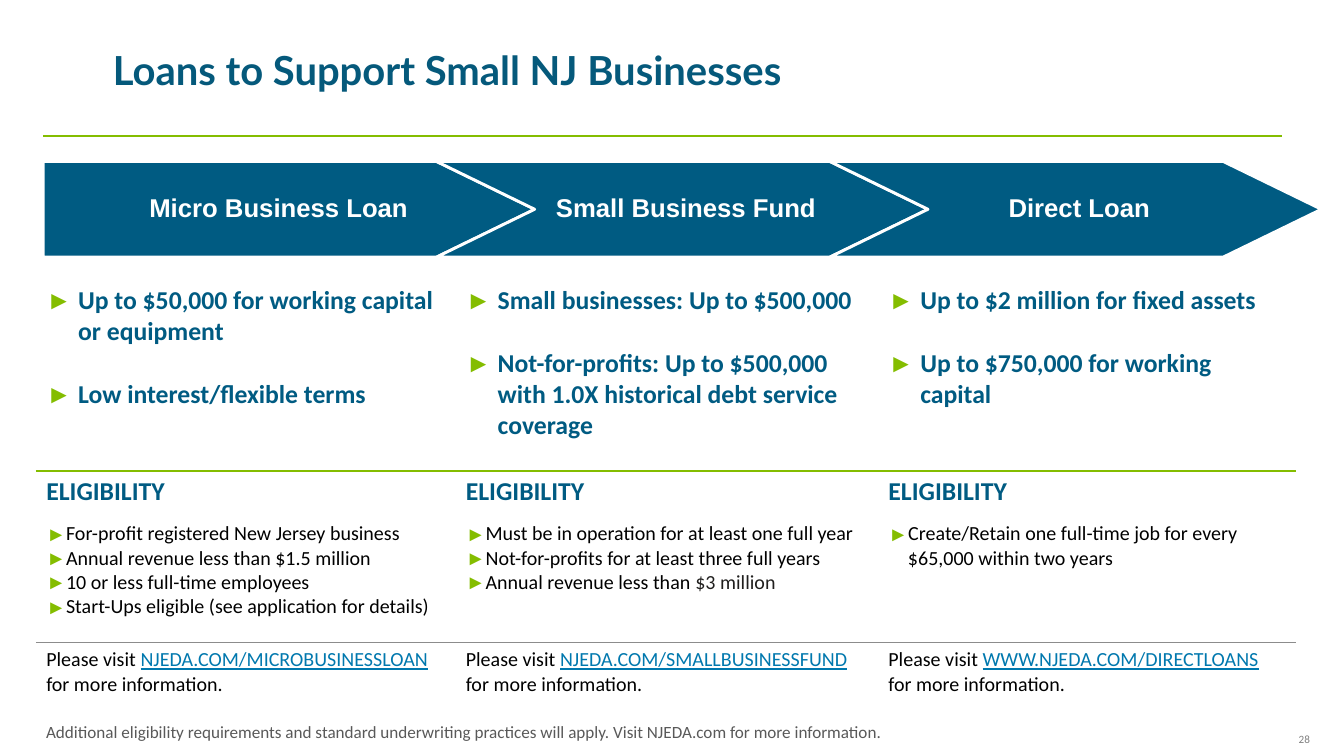
from dataclasses import dataclass
from typing import Any

from lxml import etree
from pptx import Presentation
from pptx.dml.color import RGBColor
from pptx.enum.text import MSO_ANCHOR, PP_ALIGN
from pptx.oxml.ns import qn
from pptx.util import Inches, Pt

CENTER, RIGHT = PP_ALIGN.CENTER, PP_ALIGN.RIGHT
MIDDLE = MSO_ANCHOR.MIDDLE
NO_TABLE_STYLE = "{2D5ABB26-0587-4C30-8999-92F81FD0307C}"


@dataclass(frozen=True)
class Theme:
    title_blue: str = "05597B"
    blue: str = "005B82"
    link: str = "0078AE"
    green: str = "84BD00"
    white: str = "FFFFFF"
    black: str = "000000"
    near_black: str = "201F1E"
    note_grey: str = "595959"
    number_grey: str = "808080"
    rule_grey: str = "8C8C8C"
    title_font: str = "Lato"
    arrow_font: str = "Arial"
    body_font: str = "Calibri"
    title_size: float = 28
    head_size: float = 18
    body_size: float = 14
    note_size: float = 12
    number_size: float = 7.8


T = Theme()


@dataclass(frozen=True)
class Style:
    size: float
    color: str
    font: str = T.body_font
    bold: bool = False
    underline: bool = False


@dataclass(frozen=True)
class Loan:
    name: str
    terms: list[str]
    eligibility: list[str]
    site: str
    amount: str = ""  # ends the last eligibility item in its own colour


@dataclass(frozen=True)
class Border:
    color: str
    width: float


TITLE = Style(T.title_size, T.title_blue, T.title_font, bold=True)
ARROW = Style(T.head_size, T.white, T.arrow_font, bold=True)
HEAD = Style(T.head_size, T.blue, bold=True)
BODY = Style(T.body_size, T.black)
AMOUNT = Style(T.body_size, T.near_black)
LINK = Style(T.body_size, T.link, underline=True)
NOTE = Style(T.note_size, T.note_grey)
NUMBER = Style(T.number_size, T.number_grey)

LOANS = [
    Loan("Micro Business Loan",
         ["Up to $50,000 for working capital or equipment", "Low interest/flexible terms"],
         ["For-profit registered New Jersey business", "Annual revenue less than $1.5 million",
          "10 or less full-time employees", "Start-Ups eligible (see application for details)"],
         "NJEDA.COM/MICROBUSINESSLOAN"),
    Loan("Small Business Fund",
         ["Small businesses: Up to $500,000",
          "Not-for-profits: Up to $500,000 with 1.0X historical debt service coverage"],
         ["Must be in operation for at least one full year",
          "Not-for-profits for at least three full years", "Annual revenue less than "],
         "NJEDA.COM/SMALLBUSINESSFUND", "$3 million"),
    Loan("Direct Loan",
         ["Up to $2 million for fixed assets", "Up to $750,000 for working capital"],
         ["Create/Retain one full-time job for every $65,000 within two years"],
         "WWW.NJEDA.COM/DIRECTLOANS"),
]
COLUMN_WIDTHS = [4.08, 4.11, 4.06]
ROW_HEIGHTS = [1.86, 1.67, 0.99]
RULES = [Border(T.green, 1.5), Border(T.rule_grey, 0.75)]  # below rows 1 and 2


def assign(target: Any, values: dict[str, Any]) -> None:
    for name, value in values.items():
        setattr(target, name, value)


def add_run(p: Any, text: str, style: Style) -> None:
    r = p.add_run()
    r.text = text
    assign(r.font, {"name": style.font, "size": Pt(style.size),
                    "bold": style.bold, "underline": style.underline})
    r.font.color.rgb = RGBColor.from_string(style.color)


def set_insets(tf: Any, insets: tuple[float, ...]) -> None:
    """Set the left, top, right and bottom insets."""
    sides = ("margin_left", "margin_top", "margin_right", "margin_bottom")
    assign(tf, dict(zip(sides, map(Inches, insets))))


def add_text(s: Any, box: tuple[float, ...], text: str, style: Style) -> Any:
    tf = s.shapes.add_textbox(*map(Inches, box)).text_frame
    tf.word_wrap = True
    add_run(tf.paragraphs[0], text, style)
    return tf


def add_arrow(s: Any, index: int, name: str) -> None:
    left, top, step, point, height = 0.42, 1.57, 3.825, 0.955, 0.93
    x, mid, bottom = left + index * step, top + height / 2, top + height
    outline = [(x + step, top), (x + step + point, mid), (x + step, bottom), (x, bottom)]
    if index:
        outline.append((x + point, mid))
    builder = s.shapes.build_freeform(Inches(x), Inches(top))
    builder.add_line_segments([(Inches(a), Inches(b)) for a, b in outline], close=True)
    sp = builder.convert_to_shape()
    sp.shadow.inherit = False
    sp.fill.solid()
    sp.fill.fore_color.rgb = RGBColor.from_string(T.blue)
    sp.line.color.rgb = RGBColor.from_string(T.white)
    sp.line.width = Pt(2)
    tf = sp.text_frame
    assign(tf, {"word_wrap": True, "vertical_anchor": MIDDLE})
    set_insets(tf, (0.69, 0.07, 0.62, 0.07) if index else (0.13, 0.07, 0.33, 0.07))
    p = tf.paragraphs[0]
    assign(p, {"alignment": CENTER, "line_spacing": 0.9})
    add_run(p, name, ARROW)


def add_bullet(p: Any, text: str, style: Style, indent: float) -> None:
    pPr = p._p.get_or_add_pPr()
    pPr.set("marL", str(Inches(indent)))
    pPr.set("indent", str(-Inches(indent)))
    color = etree.SubElement(pPr, qn("a:buClr"))
    etree.SubElement(color, qn("a:srgbClr"), val=T.green)
    etree.SubElement(pPr, qn("a:buFont"), typeface=T.arrow_font)
    etree.SubElement(pPr, qn("a:buChar"), char="►")
    add_run(p, text, style)


def set_border(cell: Any, tag: str, border: Border) -> None:
    ln = etree.SubElement(cell._tc.get_or_add_tcPr(), qn(tag), w=str(Pt(border.width)))
    fill = etree.SubElement(ln, qn("a:solidFill"))
    etree.SubElement(fill, qn("a:srgbClr"), val=border.color)


def fill_column(cells: list[Any], loan: Loan) -> None:
    terms, eligibility, visit = (cell.text_frame for cell in cells)
    for i, text in enumerate(loan.terms):
        p = terms.add_paragraph() if i else terms.paragraphs[0]
        p.space_before = Pt(22 if i else 0)
        add_bullet(p, text, HEAD, 0.31)

    p = eligibility.paragraphs[0]
    p.space_after = Pt(10)
    add_run(p, "ELIGIBILITY", HEAD)
    for text in loan.eligibility:
        p = eligibility.add_paragraph()
        add_bullet(p, text, BODY, 0.19)
    if loan.amount:
        add_run(p, loan.amount, AMOUNT)

    p = visit.paragraphs[0]
    add_run(p, "Please visit ", BODY)
    add_run(p, loan.site, LINK)
    p.add_line_break()
    add_run(p, "for more information.", BODY)


def add_loan_table(s: Any) -> None:
    box = (0.35, 2.72, sum(COLUMN_WIDTHS), sum(ROW_HEIGHTS))
    table = s.shapes.add_table(len(ROW_HEIGHTS), len(LOANS), *map(Inches, box)).table
    assign(table, {"first_row": False, "horz_banding": False})
    table._tbl.tblPr.find(qn("a:tableStyleId")).text = NO_TABLE_STYLE
    for row, height in zip(table.rows, ROW_HEIGHTS):
        row.height = Inches(height)
    for c, (loan, width) in enumerate(zip(LOANS, COLUMN_WIDTHS)):
        table.columns[c].width = Inches(width)
        cells = [table.cell(r, c) for r in range(len(ROW_HEIGHTS))]
        for upper, lower, rule in zip(cells, cells[1:], RULES):
            set_border(upper, "a:lnB", rule)
            set_border(lower, "a:lnT", rule)
        for cell in cells:
            cell.fill.background()
        fill_column(cells, loan)


def add_title_rule(s: Any) -> None:
    line = s.shapes.add_connector(1, Inches(0.42), Inches(1.32), Inches(12.47), Inches(1.32))
    line.line.color.rgb = RGBColor.from_string(T.green)
    line.line.width = Pt(1.5)
    etree.SubElement(line._element.spPr, qn("a:effectLst"))


def main() -> None:
    prs = Presentation()
    assign(prs, {"slide_width": Inches(13.07), "slide_height": Inches(7.35)})
    s = prs.slides.add_slide(prs.slide_layouts[6])
    number = add_text(s, (12.61, 7.12, 0.13, 0.13), "28", NUMBER)
    set_insets(number, (0, 0, 0, 0))
    assign(number, {"word_wrap": False, "vertical_anchor": MIDDLE})
    number.paragraphs[0].alignment = RIGHT
    add_text(s, (1, 0.39, 11.61, 0.57), "Loans to Support Small NJ Businesses", TITLE)
    add_title_rule(s)
    for i, loan in enumerate(LOANS):
        add_arrow(s, i, loan.name)
    add_loan_table(s)
    add_text(s, (0.35, 6.96, 8.91, 0.3), "Additional eligibility requirements and standard "
             "underwriting practices will apply. Visit NJEDA.com for more information.", NOTE)
    prs.save("out.pptx")


if __name__ == "__main__":
    main()
